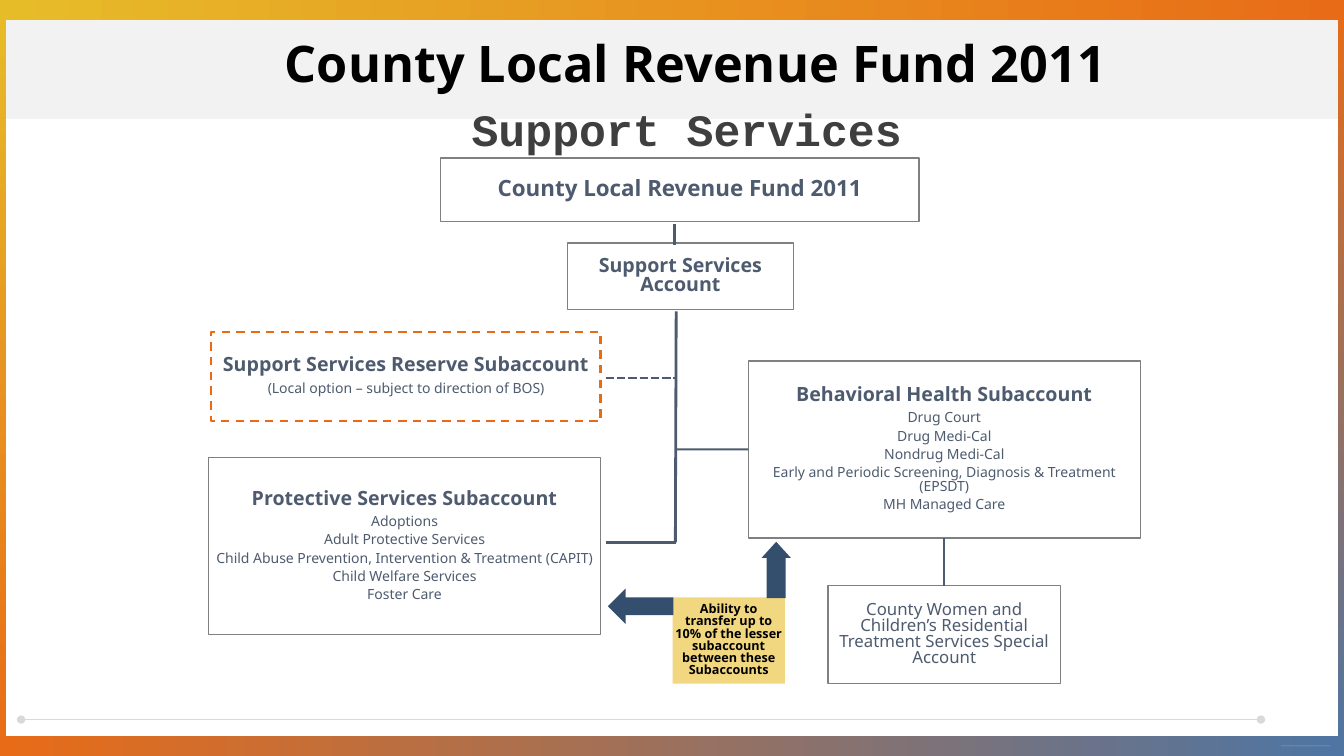
"""Build the Support Services slide of the County Local Revenue Fund 2011."""
from dataclasses import dataclass

from lxml.etree import SubElement
from pptx import Presentation
from pptx.dml.color import RGBColor
from pptx.enum.dml import MSO_LINE
from pptx.enum.shapes import MSO_CONNECTOR, MSO_SHAPE
from pptx.enum.text import MSO_ANCHOR, PP_ALIGN
from pptx.oxml.ns import qn
from pptx.util import Pt


@dataclass(frozen=True)
class Theme:
    sans: str = "Noto Sans"
    mono: str = "Courier New"
    black: str = "000000"
    white: str = "FFFFFF"
    band: str = "F2F2F2"
    rule: str = "D9D9D9"
    border: str = "808080"
    slate: str = "4E5B6F"
    subtitle: str = "3F3F3F"
    navy: str = "344E6D"
    yellow: str = "E7BC29"
    orange: str = "E86C17"
    blue: str = "4E75A3"
    note: str = "F1D77F"
    title_size: int = 36
    subtitle_size: int = 32
    fund_size: int = 16
    head_size: int = 14
    special_size: int = 12
    item_size: int = 10
    note_size: int = 9


def add_box(kind, x, y, w, h, fill=None, line=None, width=1, dash=None):
    sp = s.shapes.add_shape(kind, Pt(x), Pt(y), Pt(w), Pt(h))
    sp.shadow.inherit = False
    if fill:
        sp.fill.solid()
        sp.fill.fore_color.rgb = RGBColor.from_string(fill)
    if line:
        sp.line.color.rgb = RGBColor.from_string(line)
        sp.line.width = Pt(width)
        sp.line.dash_style = dash
    else:
        sp.line.fill.background()
    return sp


def add_text(p, text, size, color=None, font=None, bold=False, spacing=None, after=0):
    p.alignment = PP_ALIGN.CENTER
    p.line_spacing = spacing
    p.space_after = Pt(after)
    r = p.add_run()
    r.text = text
    r.font.name = font or theme.sans
    r.font.size = Pt(size)
    r.font.bold = bold
    r.font.color.rgb = RGBColor.from_string(color or theme.slate)


theme = Theme()
prs = Presentation()
prs.slide_width, prs.slide_height = Pt(960), Pt(540)
s = prs.slides.add_slide(prs.slide_layouts[6])

add_box(MSO_SHAPE.RECTANGLE, 0, 0, 960, 85, theme.band)
frame = [
    (0, 525.6, 960, 14.4, theme.orange, theme.blue, 0),
    (0, 0, 4.5, 540, theme.yellow, theme.orange, 270),
    (955.5, 0, 4.5, 540, theme.orange, theme.blue, 270),
    (0, 0, 960, 14.4, theme.yellow, theme.orange, 0),
]
for x, y, w, h, start, end, angle in frame:
    sp = add_box(MSO_SHAPE.RECTANGLE, x, y, w, h)
    sp.fill.gradient()
    sp.fill.gradient_angle = angle
    for stop, color in zip(sp.fill.gradient_stops, (start, end)):
        stop.color.rgb = RGBColor.from_string(color)

headings = [
    (121, 13.7, 751.7, 62, "County Local Revenue Fund 2011",
     theme.title_size, theme.black, theme.sans),
    (222.5, 61.2, 536.4, 62, "Support Services",
     theme.subtitle_size, theme.subtitle, theme.mono),
]
for x, y, w, h, text, size, color, font in headings:
    tf = s.shapes.add_textbox(Pt(x), Pt(y), Pt(w), Pt(h)).text_frame
    tf.word_wrap = True
    tf.vertical_anchor = MSO_ANCHOR.MIDDLE
    add_text(tf.paragraphs[0], text, size, color=color, font=font, bold=True)

outline = {"fill": theme.white, "line": theme.border}
dashed = {"fill": theme.white, "line": theme.orange, "width": 1.5, "dash": MSO_LINE.DASH}
head = {"size": theme.head_size, "bold": True}
accounts = {
    "fund": ((314.6, 113, 342, 45.4), outline,
             {"size": theme.fund_size, "bold": True},
             ["County Local Revenue Fund 2011"]),
    "support": ((405.4, 173.5, 161.3, 47.5), outline, head,
                ["Support Services Account"]),
    "reserve": ((151, 236.9, 278, 64), dashed, head,
                ["Support Services Reserve Subaccount",
                 "(Local option – subject to direction of BOS)"]),
    "behavioral": ((534.5, 257.8, 280, 126.5), outline, head,
                   ["Behavioral Health Subaccount", "Drug Court", "Drug Medi-Cal",
                    "Nondrug Medi-Cal",
                    "Early and Periodic Screening, Diagnosis & Treatment (EPSDT)",
                    "MH Managed Care"]),
    "special": ((591.5, 418.3, 166, 70), outline, {"size": theme.special_size},
                ["County Women and Children’s Residential Treatment Services "
                 "Special Account"]),
    "protective": ((149, 327, 280, 126.3), outline, head,
                   ["Protective Services Subaccount", "Adoptions",
                    "Adult Protective Services",
                    "Child Abuse Prevention, Intervention & Treatment (CAPIT)",
                    "Child Welfare Services", "Foster Care"]),
    "note": ((480.4, 426.8, 80.2, 61.5), {"fill": theme.note},
             {"size": theme.note_size, "bold": True, "color": theme.black},
             ["Ability to transfer up to 10% of the lesser subaccount "
              "between these Subaccounts"]),
}
boxes = {}
for name, (place, look, first, texts) in accounts.items():
    sp = boxes[name] = add_box(MSO_SHAPE.RECTANGLE, *place, **look)
    tf = sp.text_frame
    tf.word_wrap = True
    tf.vertical_anchor = MSO_ANCHOR.MIDDLE
    tf.margin_left = tf.margin_right = tf.margin_top = tf.margin_bottom = Pt(0.72)
    for i, text in enumerate(texts):
        p = tf.add_paragraph() if i else tf.paragraphs[0]
        style = {"size": theme.item_size} if i else first
        add_text(p, text, spacing=0.8, after=round(0.35 * style["size"], 2), **style)

add_box(MSO_SHAPE.LEFT_ARROW, 434.2, 420.5, 46.8, 25.2, theme.navy)
up = add_box(MSO_SHAPE.UP_ARROW, 544, 387, 20.9, 40.3, theme.navy)
up.adjustments[0], up.adjustments[1] = 0.65, 0.55

links = {
    "reserve": (432.7, 270, 482.4, 270, theme.slate, 2),
    "behavioral": (483, 321, 534.5, 321, theme.slate, 1.5),
    "special": (674.5, 384.3, 674.5, 418.3, theme.slate, 1.75),
    "trunk": (483, 222.5, 482.4, 387.4, theme.slate, 2),
    "protective": (432.7, 387.4, 483, 387.4, theme.slate, 2),
    "support": (481.7, 160.3, 481.7, 175, theme.slate, 1.75),
    "footer": (900.7, 514, 15.1, 514, theme.rule, 0.5),
    "corner": (950.4, 532.8, 915.1, 532.8, theme.white, 0.5),
}
lines = {}
for name, (x1, y1, x2, y2, color, width) in links.items():
    ln = lines[name] = s.shapes.add_connector(
        MSO_CONNECTOR.STRAIGHT, Pt(x1), Pt(y1), Pt(x2), Pt(y2))
    ln.line.color.rgb = RGBColor.from_string(color)
    ln.line.width = Pt(width)
    SubElement(ln._element.spPr, qn("a:effectLst"))

lines["reserve"].line.dash_style = MSO_LINE.SQUARE_DOT
lines["behavioral"].end_connect(boxes["behavioral"], 1)
lines["special"].begin_connect(boxes["behavioral"], 2)
lines["special"].end_connect(boxes["special"], 0)
for end in ("a:headEnd", "a:tailEnd"):
    SubElement(lines["footer"].line._get_or_add_ln(), qn(end), type="oval")
white = lines["corner"]._element.spPr.find(".//" + qn("a:srgbClr"))
SubElement(white, qn("a:alpha"), val="34000")

prs.save("out.pptx")
